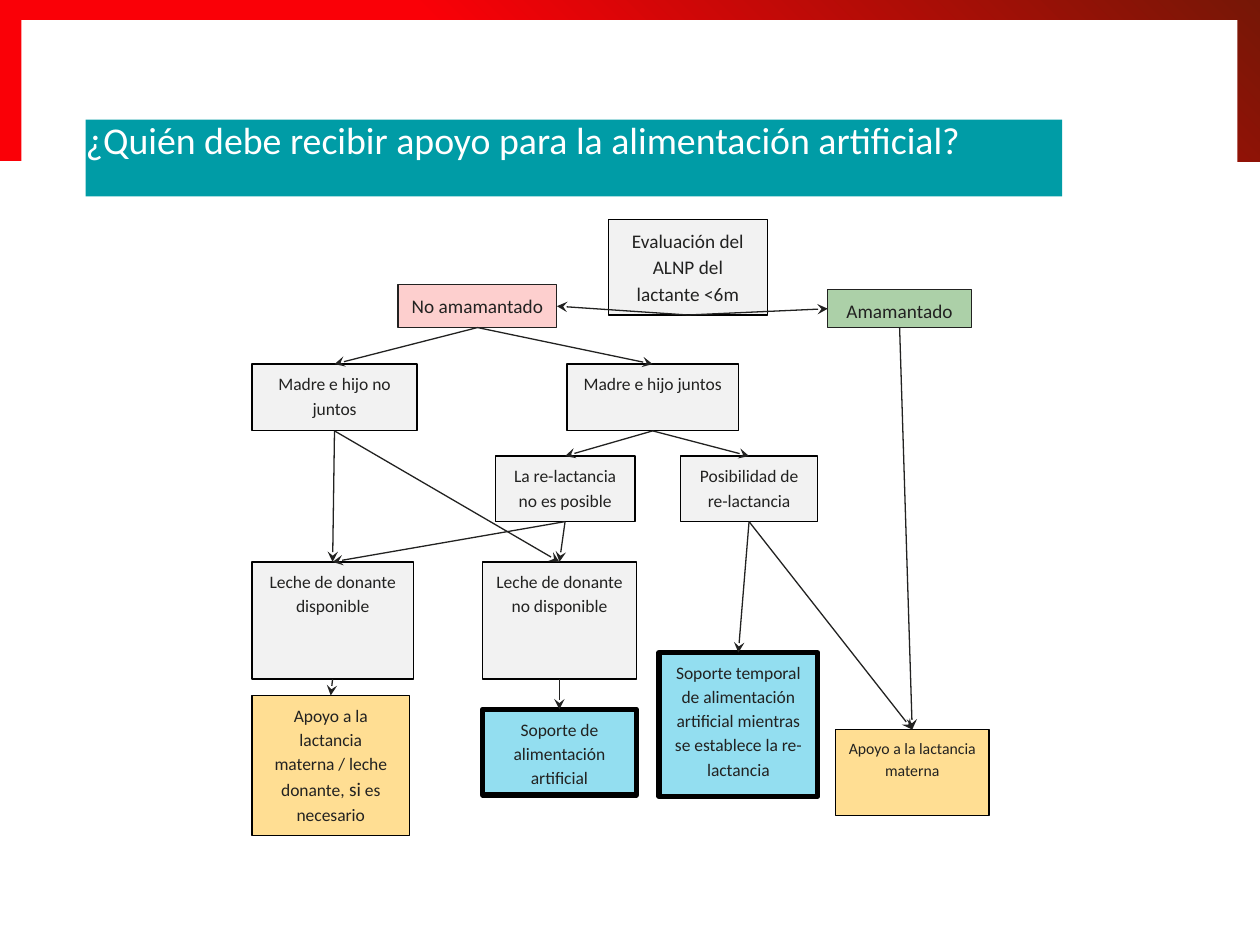
from lxml import etree
from pptx import Presentation
from pptx.dml.color import RGBColor
from pptx.enum.shapes import MSO_CONNECTOR, MSO_SHAPE
from pptx.enum.text import MSO_ANCHOR, PP_ALIGN
from pptx.oxml.ns import qn
from pptx.util import Inches, Pt

INK, BLACK, WHITE = "222221", "000000", "FFFFFF"
GREY, PINK, GREEN = "F2F2F2", "FDCFCE", "ACD0A8"
GOLD, BLUE, TEAL = "FFDE93", "93DEF0", "009CA6"
TOP, LEFT, BOTTOM, RIGHT = range(4)


def rgb(code):
    return RGBColor.from_string(code)


class Deck:
    font = "Calibri"
    thin, thick = 0.75, 3

    def __init__(self, slide):
        self.slide = slide

    def rect(self, x, y, w, h, fill=None):
        shape = self.slide.shapes.add_shape(
            MSO_SHAPE.RECTANGLE, Inches(x), Inches(y), Inches(w), Inches(h))
        shape.shadow.inherit = False
        shape.line.fill.background()
        if fill:
            shape.fill.solid()
            shape.fill.fore_color.rgb = rgb(fill)
        return shape

    def fade(self, x, y, w, h, stops, angle):
        fill = self.rect(x, y, w, h).fill
        fill.gradient()
        fill.gradient_angle = angle
        for stop, (place, color) in zip(fill.gradient_stops, stops):
            stop.position = place
            stop.color.rgb = rgb(color)

    def label(self, shape, runs, color, align, space, pad=(0, 0)):
        frame = shape.text_frame
        frame.word_wrap = True
        frame.vertical_anchor = MSO_ANCHOR.TOP
        frame.margin_left = frame.margin_right = Inches(pad[0])
        frame.margin_top = frame.margin_bottom = Inches(pad[1])
        para = frame.paragraphs[0]
        para.alignment = align
        para.line_spacing = space
        for text, size in runs:
            run = para.add_run()
            run.text = text
            run.font.name = self.font
            run.font.size = Pt(size)
            run.font.color.rgb = rgb(color)

    def title(self, x, y, w, h, text):
        bar = self.rect(x, y, w, h, TEAL)
        self.label(bar, [(text, 21.6)], WHITE, PP_ALIGN.LEFT, 0.95)

    def node(self, x, y, w, h, fill, *runs, edge=BLACK, width=thin):
        box = self.rect(x, y, w, h, fill)
        box.line.color.rgb = rgb(edge)
        box.line.width = Pt(width)
        self.label(box, runs, INK, PP_ALIGN.CENTER, 1.15, (0.1, 0.05))
        return box

    def arrow(self, start, end, side=TOP):
        line = self.slide.shapes.add_connector(MSO_CONNECTOR.STRAIGHT, 0, 0, 0, 0)
        line.begin_connect(start, BOTTOM)
        line.end_connect(end, side)
        line.line.color.rgb = rgb(INK)
        line.line.width = Pt(self.thin)
        props = line._element.spPr
        etree.SubElement(props.find(qn("a:ln")), qn("a:tailEnd"), type="stealth")
        etree.SubElement(props, qn("a:effectLst"))


def main():
    prs = Presentation()
    prs.slide_width, prs.slide_height = Inches(10), Inches(7.5)
    deck = Deck(prs.slides.add_slide(prs.slide_layouts[6]))
    node = deck.node

    # Frame and title
    deck.fade(0, 0, 10, 1.28, [(0.4, "FA0007"), (1, "761706")], 45)
    deck.rect(0.17, 0.16, 9.65, 1.18, WHITE)
    deck.title(0.68, 0.95, 7.75, 0.61,
               "¿Quién debe recibir apoyo para la alimentación artificial?")

    # Assessment
    root = node(4.83, 1.74, 1.26, 0.76, GREY,
                ("Evaluación del ALNP del lactante <6m", 11))
    unfed = node(3.16, 2.26, 1.26, 0.34, PINK, ("No amamantado", 11), edge=INK)
    fed = node(6.57, 2.3, 1.14, 0.3, GREEN, ("Amamantado", 11), edge=INK)

    # Mother and child
    apart = node(2, 2.89, 1.31, 0.53, GREY, ("Madre e hijo no juntos", 10))
    joined = node(4.5, 2.89, 1.36, 0.53, GREY, ("Madre e hijo juntos", 10))

    # Relactation
    never = node(3.93, 3.62, 1.11, 0.52, GREY, ("La re-lactancia no es posible", 10))
    maybe = node(5.4, 3.62, 1.09, 0.52, GREY, ("Posibilidad de re-lactancia", 10))

    # Donor milk
    donor = node(2, 4.46, 1.28, 0.93, GREY, ("Leche de donante disponible", 10))
    none = node(3.83, 4.46, 1.22, 0.93, GREY, ("Leche de donante no disponible", 10))

    # Kinds of support
    milk = node(2, 5.52, 1.25, 1.11, GOLD,
                ("Apoyo a la lactancia materna / leche donante,", 10),
                (" si", 11), (" es necesario", 10))
    formula = node(3.83, 5.63, 1.22, 0.68, BLUE,
                   ("Soporte de alimentación artificial", 10), width=deck.thick)
    bridge = node(5.23, 5.18, 1.26, 1.14, BLUE,
                  ("Soporte temporal de alimentación artificial mientras "
                   "se establece la re-lactancia", 10), width=deck.thick)
    breast = node(6.63, 5.79, 1.22, 0.68, GOLD, ("Apoyo a la lactancia materna", 9))

    # Arrows
    deck.arrow(root, unfed, RIGHT)
    deck.arrow(root, fed, LEFT)
    for start, ends in [
        (unfed, (apart, joined)),
        (fed, (breast,)),
        (joined, (never, maybe)),
        (apart, (donor, none)),
        (never, (donor, none)),
        (maybe, (bridge, breast)),
        (donor, (milk,)),
        (none, (formula,)),
    ]:
        for end in ends:
            deck.arrow(start, end)

    prs.save("out.pptx")


if __name__ == "__main__":
    main()
